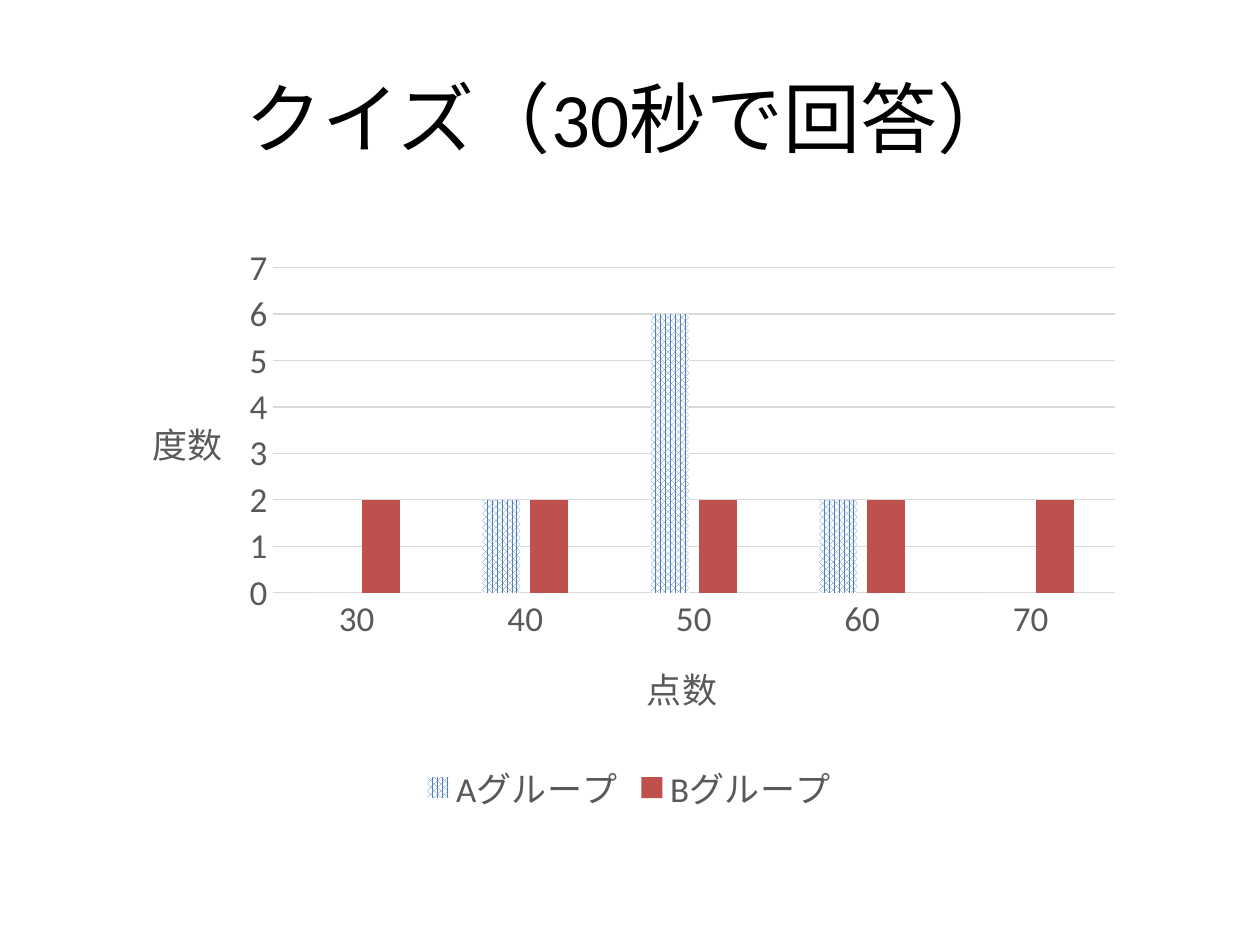
from pptx import Presentation
from pptx.chart.data import CategoryChartData
from pptx.dml.color import RGBColor
from pptx.enum.chart import XL_CHART_TYPE, XL_LEGEND_POSITION, XL_TICK_MARK
from pptx.enum.dml import MSO_PATTERN
from pptx.enum.text import MSO_ANCHOR, PP_ALIGN
from pptx.util import Pt

COLORS = {"title": "000000", "label": "595959", "grid": "D9D9D9",
          "group_a": "4F81BD", "group_b": "C0504D", "paper": "FFFFFF"}


def color(name):
    return RGBColor.from_string(COLORS[name])


def style_font(font, size, name):
    font.name = "Calibri"
    font.size = Pt(size)
    font.bold = False
    font.color.rgb = color(name)


deck = Presentation()
deck.slide_width, deck.slide_height = Pt(720), Pt(540)
page = deck.slides.add_slide(deck.slide_layouts[6])

title_box = page.shapes.add_textbox(Pt(36), Pt(21.6), Pt(648), Pt(90))
title_frame = title_box.text_frame
title_frame.word_wrap = True
title_frame.vertical_anchor = MSO_ANCHOR.MIDDLE
title_frame.text = "クイズ（30秒で回答）"
title_para = title_frame.paragraphs[0]
title_para.alignment = PP_ALIGN.CENTER
style_font(title_para.runs[0].font, 44, "title")

scores = CategoryChartData()
scores.categories = ["30", "40", "50", "60", "70"]
scores.add_series("Aグループ", [0, 2, 6, 2, 0])
scores.add_series("Bグループ", [2, 2, 2, 2, 2])
chart = page.shapes.add_chart(XL_CHART_TYPE.COLUMN_CLUSTERED, Pt(70.56), Pt(133.92),
                              Pt(578.16), Pt(334.8), scores).chart
style_font(chart.font, 10, "title")
chart.has_title = False

plot = chart.plots[0]
plot.gap_width = 219
plot.overlap = -27
plot.vary_by_categories = False
group_a, group_b = plot.series
group_a.format.fill.patterned()
group_a.format.fill.pattern = MSO_PATTERN.PERCENT_75
group_a.format.fill.fore_color.rgb = color("group_a")
group_a.format.fill.back_color.rgb = color("paper")
group_b.format.fill.solid()
group_b.format.fill.fore_color.rgb = color("group_b")

for axis, label in [(chart.category_axis, "点数"), (chart.value_axis, "度数")]:
    axis.major_tick_mark = axis.minor_tick_mark = XL_TICK_MARK.NONE
    style_font(axis.tick_labels.font, 20, "label")
    label_frame = axis.axis_title.text_frame
    label_frame.text = label
    label_frame._txBody.bodyPr.set("rot", "0")
    label_frame._txBody.bodyPr.set("vert", "horz")
    style_font(label_frame.paragraphs[0].runs[0].font, 20, "label")

chart.value_axis.minimum_scale = 0
chart.value_axis.maximum_scale = 7
chart.value_axis.major_unit = 1
chart.value_axis.has_major_gridlines = True
chart.value_axis.format.line.fill.background()
for line in [chart.category_axis.format.line, chart.value_axis.major_gridlines.format.line]:
    line.width = Pt(0.75)
    line.color.rgb = color("grid")

chart.has_legend = True
chart.legend.position = XL_LEGEND_POSITION.BOTTOM
chart.legend.include_in_layout = False
style_font(chart.legend.font, 20, "label")

deck.save("out.pptx")
